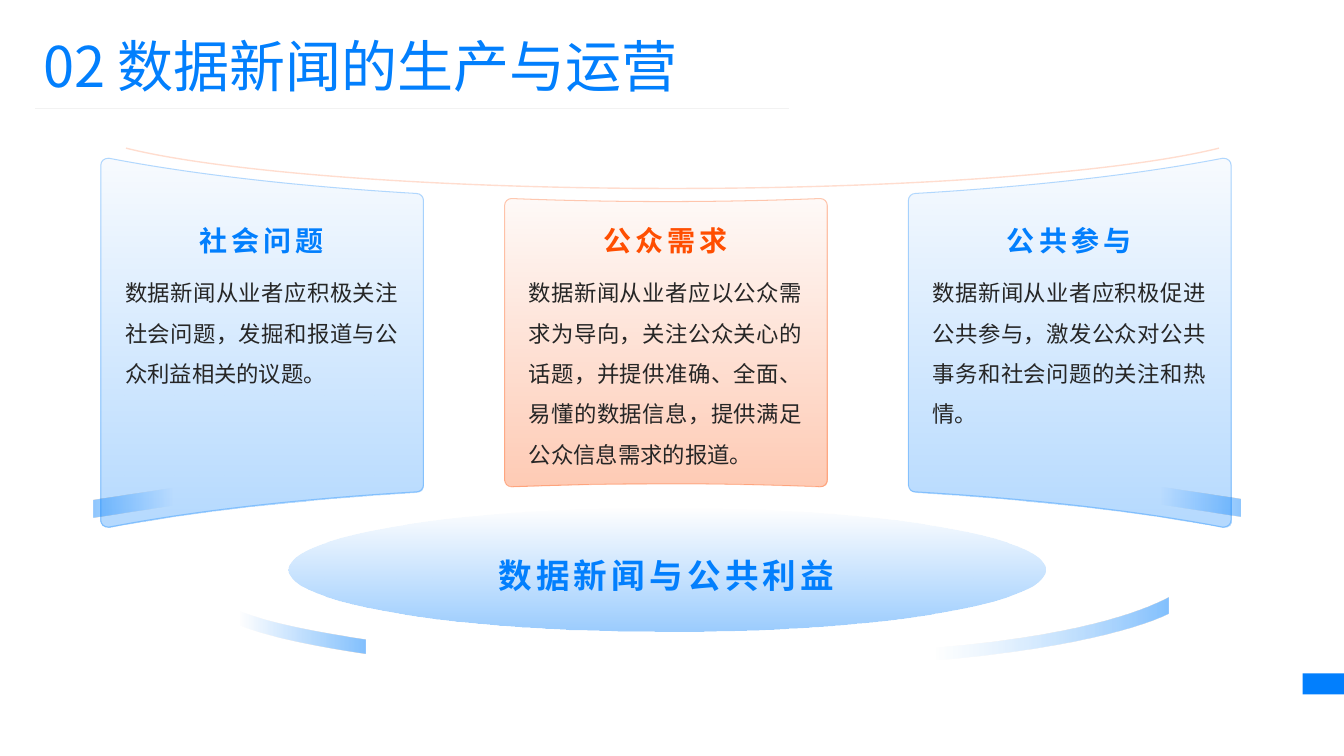
from dataclasses import dataclass

from lxml import etree
from pptx import Presentation
from pptx import util as u
from pptx.dml.color import RGBColor
from pptx.enum import shapes, text
from pptx.oxml.ns import qn


@dataclass(frozen=True)
class Theme:
    font: str = "Noto Sans CJK SC"
    blue: str = "027FFD"
    sky: str = "67B2FE"
    orange: str = "FF4E01"
    ink: str = "262626"
    rule: str = "F2F2F2"
    title: int = 40
    core: int = 24
    heading: int = 20
    body: int = 16


THEME = Theme()
PANELS = [
    ("社会问题", "数据新闻从业者应积极关注社会问题，发掘和报道与公众利益相关的议题。"),
    ("公众需求", "数据新闻从业者应以公众需求为导向，关注公众关心的话题，并提供准确、"
                 "全面、易懂的数据信息，提供满足公众信息需求的报道。"),
    ("公共参与", "数据新闻从业者应积极促进公共参与，激发公众对公共事务和社会问题的"
                 "关注和热情。"),
]


def set_alpha(parent, percents):
    """Give each colour below parent its opacity."""
    for colour, percent in zip(parent.iter(qn("a:srgbClr")), percents):
        etree.SubElement(colour, qn("a:alpha")).set("val", str(percent * 1000))


def fade(shape, percents, angle=270, start=0, colours=(THEME.blue, THEME.blue)):
    """Fill with a two-stop gradient of changing opacity."""
    shape.fill.gradient()
    shape.fill.gradient_angle = angle
    for stop, colour, position in zip(shape.fill.gradient_stops, colours, (start, 1)):
        stop.color.rgb = RGBColor.from_string(colour)
        stop.position = position
    set_alpha(shape._element.spPr.find(qn("a:gradFill")), percents)


def outline(shape, colour=None, width=1, percent=100):
    shape.shadow.inherit = False
    if colour is None:
        shape.line.fill.background()
        return
    shape.line.color.rgb = RGBColor.from_string(colour)
    shape.line.width = u.Pt(width)
    set_alpha(shape._element.spPr.find(qn("a:ln")), [percent])


def add_outline(page, origin, start, steps, close=True):
    """Draw from start; a step of one point is a line, of three a curve."""
    def place(point):
        return tuple(u.Inches(base + offset) for base, offset in zip(origin, point))

    builder = page.shapes.build_freeform(*place(start))
    builder.add_line_segments([place(step[-1]) for step in steps], close=close)
    shape = builder.convert_to_shape()

    # Replace the straight segments with the curves
    track = next(shape._element.iter(qn("a:path")))
    for segment in list(track):
        track.remove(segment)
    for step in [[start]] + steps:
        kind = "a:moveTo" if step[0] is start else "a:cubicBezTo" if len(step) == 3 else "a:lnTo"
        segment = etree.SubElement(track, qn(kind))
        for point in step:
            x, y = place(point)
            spot = etree.SubElement(segment, qn("a:pt"))
            spot.set("x", str(x - shape.left))
            spot.set("y", str(y - shape.top))
    if close:
        etree.SubElement(track, qn("a:close"))
    return shape


def add_text(page, box, words, size, colour=THEME.blue, bold=False, align=text.PP_ALIGN.LEFT,
             anchor=text.MSO_ANCHOR.TOP, inset=(0, 0), line_spacing=None, after=None, spacing=0):
    frame = page.shapes.add_textbox(*map(u.Inches, box)).text_frame
    frame.word_wrap = True
    frame.vertical_anchor = anchor
    frame.margin_left = frame.margin_right = u.Inches(inset[0])
    frame.margin_top = frame.margin_bottom = u.Inches(inset[1])
    para = frame.paragraphs[0]
    para.alignment = align
    para.line_spacing = line_spacing
    if after is not None:
        para.space_after = u.Pt(after)
    span = para.add_run()
    span.text = words
    span.font.size = u.Pt(size)
    span.font.bold = bold
    span.font.name = THEME.font
    span.font.color.rgb = RGBColor.from_string(colour)
    properties = span.font._element
    etree.SubElement(properties, qn("a:ea")).set("typeface", THEME.font)
    if spacing:
        properties.set("spc", str(spacing * 100))


def add_header(page, box):
    left, top, width, height = box
    add_text(page, box, "02 数据新闻的生产与运营", THEME.title, inset=(0.1, 0.05))
    line_y = u.Inches(top + height + 0.05)
    rule = page.shapes.add_connector(shapes.MSO_CONNECTOR.STRAIGHT, u.Inches(left + 0.02), line_y,
                                     u.Inches(left + width - 0.18), line_y)
    rule.line.color.rgb = RGBColor.from_string(THEME.rule)
    rule.line.width = u.Pt(0.5)
    etree.SubElement(rule._element.spPr, qn("a:effectLst"))


def add_stage(page, box):
    """Oval base with its label and two sweeping strokes."""
    left, top, width, height = box
    oval = page.shapes.add_shape(shapes.MSO_SHAPE.OVAL, *map(u.Inches, box))
    fade(oval, (0, 40))
    outline(oval)
    add_text(page, (left + 0.65, top + 0.24, 6.2, 0.85), "数据新闻与公共利益", THEME.core, bold=True,
             align=text.PP_ALIGN.CENTER, anchor=text.MSO_ANCHOR.MIDDLE, spacing=3)

    left_sweep = [[(1.41, 0.51)], [(1.41, 0.51), (0.17, 0.34), (0, 0.13)],
                  [(0.01, 0)], [(0.01, 0), (0.11, 0.18), (1.41, 0.37)]]
    right_sweep = [[(2.63, 0.16)], [(2.63, 0.16), (2.02, 0.5), (0.01, 0.64)],
                   [(0, 0.51)], [(0, 0.51), (1.77, 0.44), (2.63, 0)]]
    for offset, steps, pale in (((-0.65, 0.93), left_sweep, THEME.blue),
                                ((6.1, 0.89), right_sweep, THEME.sky)):
        sweep = add_outline(page, (left + offset[0], top + offset[1]), steps[-1][-1], steps)
        fade(sweep, (0, 49), angle=0, start=0.12, colours=(pale, THEME.blue))
        outline(sweep)


def add_panel(page, box, edge, colour, mirror=False):
    """Curved card: its bottom edge is its top edge turned over."""
    left, top, width, height = box
    radius, pull = 0.07, 0.03
    low, high = edge[0][1], edge[-1][1]
    upper = [(0, low + radius), (0, low + pull), (pull, low), *edge,
             (width - pull, high), (width, high + pull), (width, high + radius)]
    lower = [(x, height - y) for x, y in reversed(upper)]
    if mirror:
        upper, lower = ([(width - x, y) for x, y in side] for side in (upper, lower))
    curves = [[side[i:i + 3] for i in range(1, len(side), 3)] for side in (upper, lower)]
    panel = add_outline(page, (left, top), upper[0], curves[0] + [[lower[0]]] + curves[1])
    fade(panel, (3, 30), colours=(colour, colour))
    outline(panel, colour, 0.75, 30)


def add_panels(page, box):
    """Three cards under an arc, with a ribbon on each outer edge."""
    left, top, width, height = box
    card_width = 3.2
    pitch = (width - card_width) / 2
    side_edge = [(0.08, 0), (0.91, 0.16), (1.96, 0.28), (3.13, 0.35)]
    middle_edge = [(0.07, 0), (1.09, 0.04), (2.11, 0.04), (3.13, 0)]

    for index, (heading, body) in enumerate(PANELS):
        middle = index == 1
        card_left = left + index * pitch
        drop = 0.4 if middle else 0
        colour = THEME.orange if middle else THEME.blue
        add_panel(page, (card_left, top + drop, card_width, height - 2 * drop),
                  middle_edge if middle else side_edge, colour, mirror=index == 2)
        add_text(page, (card_left + 0.24, top + 0.62, 2.71, 0.39), heading, THEME.heading, colour,
                 bold=True, align=text.PP_ALIGN.CENTER, anchor=text.MSO_ANCHOR.MIDDLE, spacing=3)
        add_text(page, (card_left + 0.24, top + 1.07, 2.71, 1.66), body, THEME.body,
                 THEME.ink, align=text.PP_ALIGN.JUSTIFY, line_spacing=1.5, after=10)

    # Arc above the cards
    arc = add_outline(page, (left + 0.25, top - 0.1), (10.84, 0),
                      [[(9.92, 0.23), (7.84, 0.4), (5.42, 0.4)],
                       [(3, 0.4), (0.92, 0.23), (0, 0)]], close=False)
    arc.fill.background()
    outline(arc, THEME.orange, 1, 18)

    # Ribbons
    ribbon = [[(0, 0.3)], [(0, 0.3), (0.73, 0.19), (0.89, 0.17)], [(0.89, 0)]]
    flipped = [[(0.89 - x, y) for x, y in step] for step in ribbon]
    for ribbon_left, ribbon_top, start_x, steps, angle in (
            (left - 0.07, top + 3.26, 0, ribbon, 180),
            (left + width - 0.8, top + 3.25, 0.89, flipped, 0)):
        band = add_outline(page, (ribbon_left, ribbon_top), (start_x, 0.13), steps)
        fade(band, (0, 44), angle=angle, start=0.12)
        outline(band)


def add_corner_mark(page, box):
    mark = page.shapes.add_shape(shapes.MSO_SHAPE.RECTANGLE, *map(u.Inches, box))
    mark.fill.solid()
    mark.fill.fore_color.rgb = RGBColor.from_string(THEME.blue)
    outline(mark)


def main():
    deck = Presentation()
    deck.slide_width, deck.slide_height = u.Inches(13.33), u.Inches(7.5)
    page = deck.slides.add_slide(deck.slide_layouts[6])
    add_corner_mark(page, (12.92, 6.68, 0.41, 0.21))
    add_stage(page, (2.86, 5.04, 7.51, 1.23))
    add_panels(page, (1, 1.57, 11.21, 3.66))
    add_header(page, (0.33, 0.26, 7.68, 0.77))
    deck.save("out.pptx")


if __name__ == "__main__":
    main()
